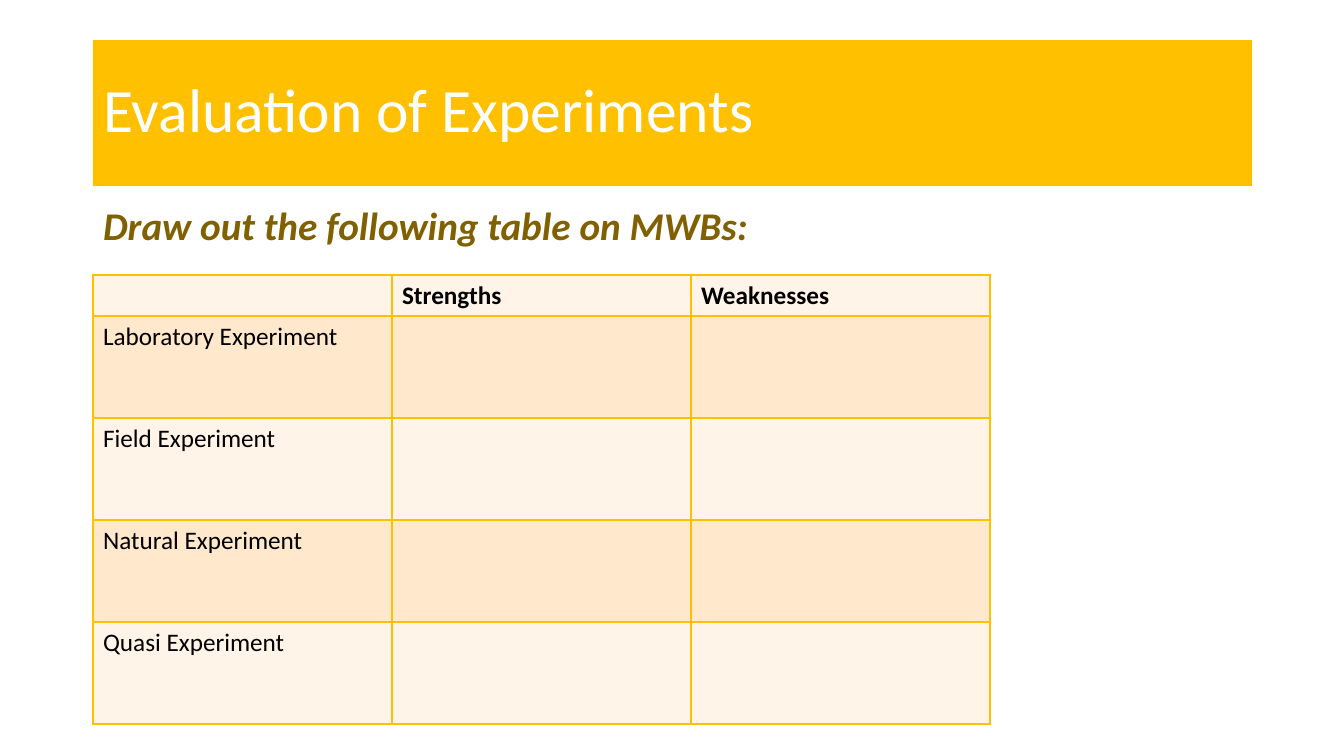
from lxml.etree import SubElement
from pptx import Presentation
from pptx.dml.color import RGBColor
from pptx.enum.text import MSO_ANCHOR, MSO_AUTO_SIZE, PP_ALIGN
from pptx.oxml.ns import qn
from pptx.util import Pt

FONT = "Calibri"
GOLD, BROWN, WHITE, BLACK = "FFC000", "806000", "FFFFFF", "000000"
PALE, PEACH = "FFF4E7", "FFE8CC"

LEFT = 93
COLUMN_WIDTH = 299
HEADER_HEIGHT, ROW_HEIGHT = 41, 102

TABLE_ROWS = [
    ["", "Strengths", "Weaknesses"],
    ["Laboratory Experiment", "", ""],
    ["Field Experiment", "", ""],
    ["Natural Experiment", "", ""],
    ["Quasi Experiment", "", ""],
]


def px(length):
    """Turn px (1344 across the slide) into EMU."""
    return round(length * 12192000 / 1344)


def color(hex_string):
    return RGBColor.from_string(hex_string)


def fill_solid(part, hex_string):
    part.fill.solid()
    part.fill.fore_color.rgb = color(hex_string)


def write(frame, text, size=18, hex_string=BLACK, bold=False, italic=False,
          line_spacing=1.0, space_before=0):
    paragraph = frame.paragraphs[0]
    paragraph.alignment = PP_ALIGN.LEFT
    paragraph.line_spacing = line_spacing
    paragraph.space_before = Pt(space_before)
    run = paragraph.add_run()
    run.text = text
    font = run.font
    font.name, font.size, font.bold, font.italic = FONT, Pt(size), bold, italic
    font.color.rgb = color(hex_string)
    return paragraph


def place(placeholder, left, top, width, height, anchor):
    placeholder.left, placeholder.top = px(left), px(top)
    placeholder.width, placeholder.height = px(width), px(height)
    frame = placeholder.text_frame
    frame.word_wrap = True
    frame.auto_size = MSO_AUTO_SIZE.NONE
    frame.vertical_anchor = anchor
    return frame


def remove_bullet(paragraph):
    properties = paragraph._p.get_or_add_pPr()
    properties.set("marL", "0")
    properties.set("indent", "0")
    SubElement(properties, qn("a:buNone"))


def add_borders(cell, hex_string, width):
    properties = cell._tc.get_or_add_tcPr()
    for position, side in enumerate(("lnL", "lnR", "lnT", "lnB")):
        line = SubElement(properties, qn(f"a:{side}"), w=str(Pt(width)))
        SubElement(SubElement(line, qn("a:solidFill")), qn("a:srgbClr"), val=hex_string)
        # Borders come before the fill in a cell's properties
        properties.insert(position, line)


def add_evaluation_table(slide, top):
    row_count, column_count = len(TABLE_ROWS), len(TABLE_ROWS[0])
    height = HEADER_HEIGHT + ROW_HEIGHT * (row_count - 1)
    table = slide.shapes.add_table(row_count, column_count, px(LEFT), px(top),
                                   px(COLUMN_WIDTH * column_count), px(height)).table
    table.first_row = table.horz_banding = False
    for column in table.columns:
        column.width = px(COLUMN_WIDTH)
    for index, labels in enumerate(TABLE_ROWS):
        is_header = index == 0
        table.rows[index].height = px(HEADER_HEIGHT if is_header else ROW_HEIGHT)
        for cell, label in zip(table.rows[index].cells, labels):
            fill_solid(cell, PEACH if index % 2 else PALE)
            add_borders(cell, GOLD, 1)
            if label:
                write(cell.text_frame, label, bold=is_header)


def main():
    presentation = Presentation()
    presentation.slide_width, presentation.slide_height = px(1344), px(756)
    slide = presentation.slides.add_slide(presentation.slide_layouts[1])

    # Title banner
    title = slide.shapes.title
    fill_solid(title, GOLD)
    heading = place(title, LEFT, 40, 1159, 146, MSO_ANCHOR.MIDDLE)
    write(heading, "Evaluation of Experiments", size=44, hex_string=WHITE, line_spacing=0.9)

    # Task for the class
    task = place(slide.placeholders[1], LEFT, 202, 1159, 480, MSO_ANCHOR.TOP)
    instruction = write(task, "Draw out the following table on MWBs:", size=28,
                        hex_string=BROWN, bold=True, italic=True,
                        line_spacing=0.9, space_before=10)
    remove_bullet(instruction)

    # Strengths and weaknesses grid
    add_evaluation_table(slide, 275)

    presentation.save("out.pptx")


if __name__ == "__main__":
    main()
